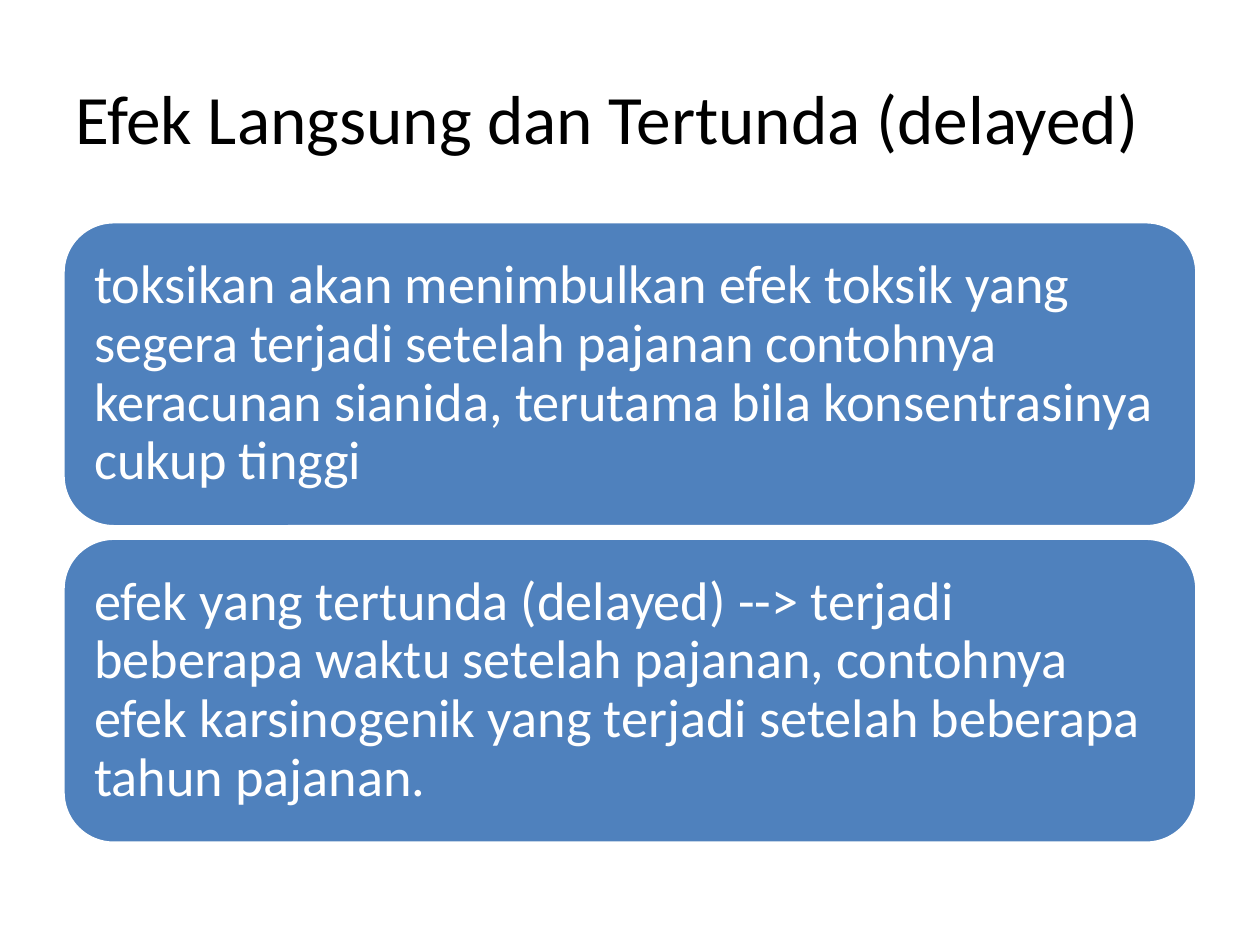
from dataclasses import dataclass

from pptx import Presentation
from pptx.dml.color import RGBColor
from pptx.enum.shapes import MSO_SHAPE
from pptx.enum.text import MSO_ANCHOR, PP_ALIGN
from pptx.util import Cm, Pt


@dataclass(frozen=True)
class Theme:
    font: str = "Calibri"
    title_color: RGBColor = RGBColor(0x00, 0x00, 0x00)
    card_fill: RGBColor = RGBColor(0x4F, 0x81, 0xBD)
    card_text: RGBColor = RGBColor(0xFF, 0xFF, 0xFF)
    card_line: RGBColor = RGBColor(0xFF, 0xFF, 0xFF)
    title_size: float = 39.6
    card_size: float = 31


class SlideBuilder:
    def __init__(self, slide, theme):
        self.slide = slide
        self.theme = theme

    def _write(self, frame, wording, size, color):
        """Put one left-aligned, vertically centred paragraph in the frame."""
        frame.word_wrap = True
        frame.vertical_anchor = MSO_ANCHOR.MIDDLE
        paragraph = frame.paragraphs[0]
        paragraph.alignment = PP_ALIGN.LEFT
        run = paragraph.add_run()
        run.text = wording
        run.font.name = self.theme.font
        run.font.size = Pt(size)
        run.font.color.rgb = color
        return paragraph

    def title(self, wording, left, top, width, height):
        heading = self.slide.shapes.add_textbox(left, top, width, height)
        self._write(heading.text_frame, wording,
                    self.theme.title_size, self.theme.title_color)

    def card(self, wording, left, top, width, height):
        card = self.slide.shapes.add_shape(
            MSO_SHAPE.ROUNDED_RECTANGLE, left, top, width, height)
        card.shadow.inherit = False
        card.fill.solid()
        card.fill.fore_color.rgb = self.theme.card_fill
        card.line.color.rgb = self.theme.card_line
        card.line.width = Pt(2)
        frame = card.text_frame
        frame.margin_left = frame.margin_right = Cm(0.33)
        frame.margin_top = frame.margin_bottom = Cm(0.33)
        paragraph = self._write(frame, wording,
                                self.theme.card_size, self.theme.card_text)
        paragraph.line_spacing = 0.9


EFFECTS = [
    "toksikan akan menimbulkan efek toksik yang segera terjadi setelah "
    "pajanan contohnya keracunan sianida, terutama bila konsentrasinya "
    "cukup tinggi",
    "efek yang tertunda (delayed) --> terjadi beberapa waktu setelah "
    "pajanan, contohnya efek karsinogenik yang terjadi setelah beberapa "
    "tahun pajanan.",
]


def main():
    deck = Presentation()
    deck.slide_width, deck.slide_height = Cm(25.4), Cm(19.05)
    builder = SlideBuilder(deck.slides.add_slide(deck.slide_layouts[6]), Theme())

    left, width = Cm(1.27), Cm(22.86)
    builder.title("Efek Langsung dan Tertunda (delayed)",
                  left, Cm(0.76), width, Cm(3.18))

    first_top, card_height, gap = Cm(4.47), Cm(6.15), Cm(0.23)
    for row, effect in enumerate(EFFECTS):
        top = first_top + row * (card_height + gap)
        builder.card(effect, left, top, width, card_height)

    deck.save("out.pptx")


if __name__ == "__main__":
    main()
